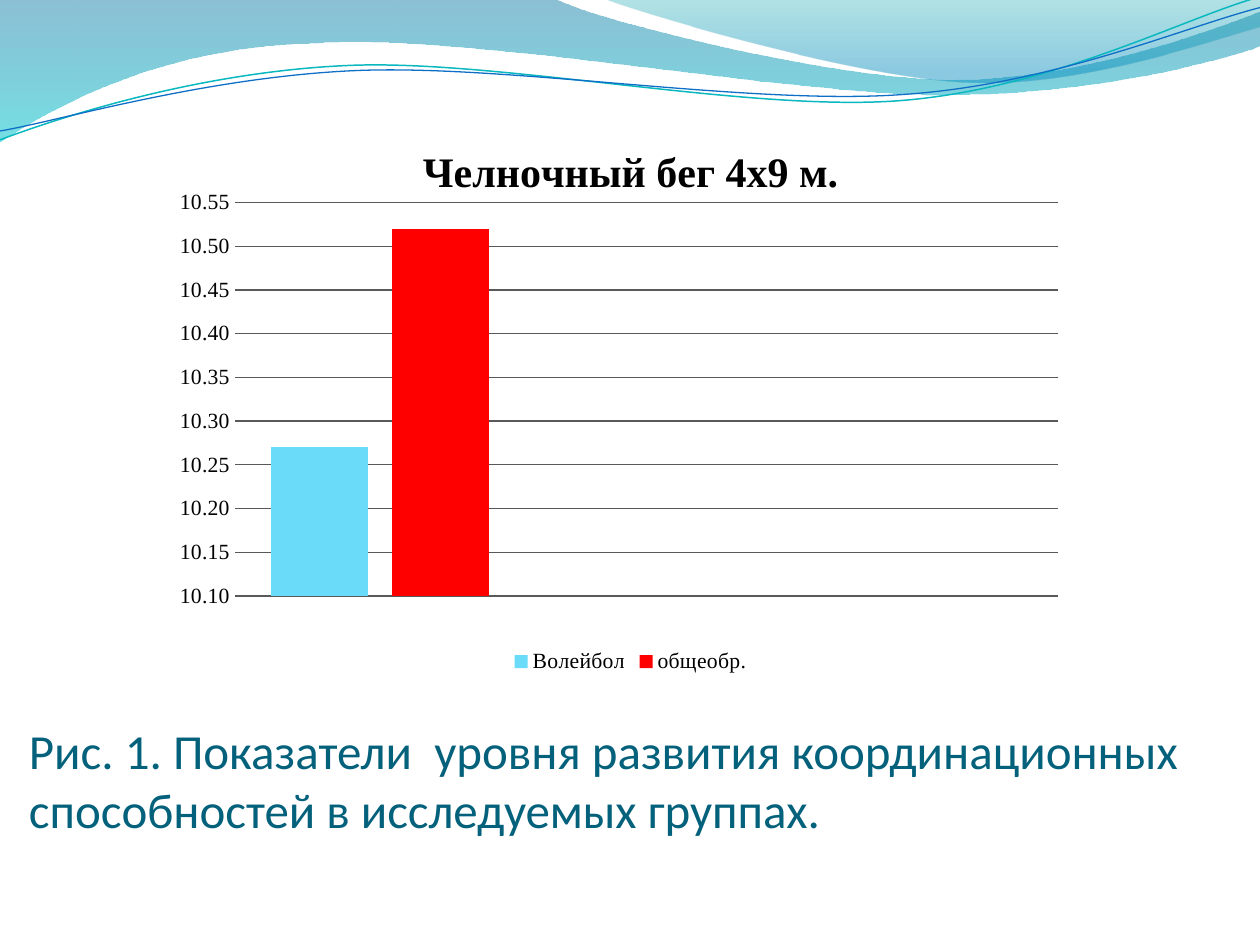
from math import cos, radians, sin
from lxml.etree import SubElement
from pptx import Presentation
from pptx.chart.data import CategoryChartData
from pptx.dml.color import RGBColor
from pptx.enum.chart import XL_CHART_TYPE, XL_LEGEND_POSITION, XL_TICK_MARK
from pptx.enum.text import MSO_ANCHOR, MSO_AUTO_SIZE, PP_ALIGN
from pptx.oxml import parse_xml
from pptx.oxml.ns import nsdecls, qn
from pptx.util import Inches, Pt

WIDTH, HEIGHT = Inches(10), Inches(7.5)
COL, ROW = WIDTH / 10, HEIGHT / 7.5
TURN = 357.3

BLACK = RGBColor(0x00, 0x00, 0x00)
GRAY = RGBColor(0x59, 0x59, 0x59)
INK = RGBColor(0x04, 0x61, 0x7B)
SKY = RGBColor(0x6B, 0xDB, 0xFA)
RED = RGBColor(0xFF, 0x00, 0x00)
AQUA = RGBColor(0x0B, 0xD0, 0xD9)
TEAL = RGBColor(0x0A, 0xB8, 0xBF)
BLUE = RGBColor(0x0F, 0x6F, 0xC6)
DEEP = RGBColor(0x00, 0x74, 0xA1)
CYAN = RGBColor(0x00, 0xC6, 0xCF)
PINE = RGBColor(0x00, 0xA1, 0xA9)
AZURE = RGBColor(0x00, 0x8B, 0xBF)

BAND = [(0, 0), (4.4, -0.01), (4.76, 0.17, 6.64, 0.63, 7.58, 0.63),
        (8.53, 0.63, 9.58, 0.26, 10, 0.09), (10.01, 0.36),
        (9.83, 0.44, 8.7, 0.76, 7.46, 0.75), (6.22, 0.75, 3.82, 0.28, 2.57, 0.34),
        (1.29, 0.36, 0.46, 0.83, -0.01, 1.13), (0, 0)]
CREST = [(4.79, -0.01), (5.09, 0.11, 6.82, 0.62, 7.69, 0.65),
         (8.56, 0.69, 9.61, 0.32, 10, 0.21), (10, 0), (4.79, -0.01)]
UPPER = [(0, 1.11), (0.48, 0.93, 1.58, 0.57, 2.77, 0.52),
         (3.95, 0.47, 5.93, 0.89, 7.13, 0.8), (8.33, 0.71, 9.38, 0.15, 9.98, -0.02)]
LOWER = [(0, 1.04), (0.47, 0.96, 1.64, 0.61, 2.83, 0.56),
         (4.03, 0.51, 5.97, 0.84, 7.17, 0.75), (8.36, 0.67, 9.41, 0.21, 10, 0.06)]


def grid(left, top, wide, high):
    return round(left * COL), round(top * ROW), round(wide * COL), round(high * ROW)


def style(font, face, size, color, bold=False):
    font.name, font.size, font.bold = face, Pt(size), bold
    font.color.rgb = color


def write(frame, text, align=PP_ALIGN.LEFT, **form):
    frame.text = text
    line = frame.paragraphs[0]
    line.alignment = align
    style(line.runs[0].font, **form)


def local(step, box, turn):
    left, top, wide, high = box
    c, s = cos(radians(-turn)), sin(radians(-turn))
    dots = []
    for x, y in zip(step[::2], step[1::2]):
        dx, dy = x - left - wide / 2, y - top - high / 2
        dots.append((round((dx * c - dy * s + wide / 2) * COL),
                     round((dx * s + dy * c + high / 2) * ROW)))
    return dots


def draw(slide, track, box, close, turn=0):
    steps = [local(step, box, turn) for step in track]
    pen = slide.shapes.build_freeform(*steps[0][-1])
    pen.add_line_segments([step[-1] for step in steps[1:]], close=close)
    shape = pen.convert_to_shape()
    shape.shadow.inherit = False
    shape.left, shape.top, shape.width, shape.height = grid(*box)
    shape.rotation = turn
    route = next(shape.element.spPr.iter(qn("a:path")))
    route.set("w", str(shape.width))
    route.set("h", str(shape.height))
    for old in list(route):
        route.remove(old)
    for i, dots in enumerate(steps):
        kind = "moveTo" if i == 0 else "cubicBezTo" if len(dots) == 3 else "lnTo"
        node = SubElement(route, qn(f"a:{kind}"))
        for x, y in dots:
            SubElement(node, qn("a:pt"), x=str(x), y=str(y))
    if close:
        SubElement(route, qn("a:close"))
    return shape


def wave(slide, track, box, stops):
    shape = draw(slide, track, box, True)
    shape.line.fill.background()
    shape.fill.gradient()
    shape.fill.gradient_angle = 270
    for stop, (place, color, _) in zip(shape.fill.gradient_stops, stops):
        stop.position = place
        stop.color.rgb = color
    tones = shape.element.spPr.iter(qn("a:srgbClr"))
    for tone, (_, _, share) in zip(list(tones), stops):
        SubElement(tone, qn("a:alpha")).set("val", str(share * 1000))


def curve(slide, track, box, color, width):
    shape = draw(slide, track, box, False, TURN)
    shape.fill.background()
    shape.line.color.rgb = color
    shape.line.width = Pt(width)


def title(slide, text):
    box = slide.shapes.title
    box.left, box.top, box.width, box.height = grid(0.23, 5.39, 9.5, 1.72)
    frame = box.text_frame
    frame.auto_size = MSO_AUTO_SIZE.NONE
    frame.word_wrap = True
    frame.vertical_anchor = MSO_ANCHOR.BOTTOM
    frame.margin_left = frame.margin_right = 0
    frame.margin_top, frame.margin_bottom = Inches(0.05), Inches(0.46)
    write(frame, text, face="Calibri", size=28, color=INK)


def fix_plot(chart, **place):
    area = chart.element.chart.plotArea
    for old in area.findall(qn("c:layout")):
        area.remove(old)
    marks = "".join(f'<c:{k} val="{v / 100}"/>' for k, v in place.items())
    area.insert(0, parse_xml(
        f'<c:layout {nsdecls("c")}><c:manualLayout><c:layoutTarget val="inner"/>'
        f'<c:xMode val="edge"/><c:yMode val="edge"/>{marks}</c:manualLayout></c:layout>'))


def hide_entry(chart, index):
    spot = chart.element.chart.find(qn("c:legend")).find(qn("c:legendPos"))
    spot.addnext(parse_xml(
        f'<c:legendEntry {nsdecls("c")}><c:idx val="{index}"/>'
        '<c:delete val="1"/></c:legendEntry>'))


def bars(slide):
    data = CategoryChartData(number_format="0.00")
    data.categories = ["1", "2"]
    data.add_series("Волейбол", (10.27, None))
    data.add_series("общеобр.", (10.52, None))
    data.add_series("Series 3", (None, None))
    chart = slide.shapes.add_chart(
        XL_CHART_TYPE.COLUMN_CLUSTERED, *grid(1.02, 0.94, 7.97, 4.45), data).chart
    style(chart.font, "Times New Roman", 12.4, BLACK)
    chart.has_title = True
    write(chart.chart_title.text_frame, "Челночный бег 4х9 м.", align=PP_ALIGN.CENTER,
          face="Times New Roman", size=24, color=BLACK, bold=True)
    chart.chart_title.include_in_layout = False
    chart.has_legend = True
    chart.legend.position = XL_LEGEND_POSITION.BOTTOM
    chart.legend.include_in_layout = False
    hide_entry(chart, 2)
    chart.category_axis.visible = False
    axis = chart.value_axis
    axis.minimum_scale, axis.maximum_scale, axis.major_unit = 10.1, 10.55, 0.05
    axis.major_tick_mark = axis.minor_tick_mark = XL_TICK_MARK.NONE
    axis.tick_labels.number_format = "0.00"
    axis.tick_labels.number_format_is_linked = False
    axis.format.line.fill.background()
    axis.major_gridlines.format.line.color.rgb = GRAY
    axis.major_gridlines.format.line.width = Pt(0.75)
    plot = chart.plots[0]
    plot.gap_width, plot.overlap, plot.vary_by_categories = 75, -25, False
    for row, color in zip(plot.series, (SKY, RED, AQUA)):
        row.format.fill.solid()
        row.format.fill.fore_color.rgb = color
    fix_plot(chart, x=10.6, y=15, w=82, h=70.2)


def main():
    deck = Presentation()
    deck.slide_width, deck.slide_height = WIDTH, HEIGHT
    slide = deck.slides.add_slide(deck.slide_layouts[5])
    wave(slide, BAND, (-0.01, -0.01, 10.02, 1.14), [(0, DEEP, 45), (1, CYAN, 55)])
    wave(slide, CREST, (4.79, -0.01, 5.21, 0.7), [(0, PINE, 30), (0.8, AZURE, 45)])
    curve(slide, UPPER, (-0.02, 0.22, 10.02, 0.71), TEAL, 0.85)
    curve(slide, LOWER, (-0.02, 0.3, 10.03, 0.58), BLUE, 0.75)
    title(slide, "Рис. 1. Показатели  уровня развития координационных "
                 "способностей в исследуемых группах.")
    bars(slide)
    deck.save("out.pptx")


if __name__ == "__main__":
    main()
